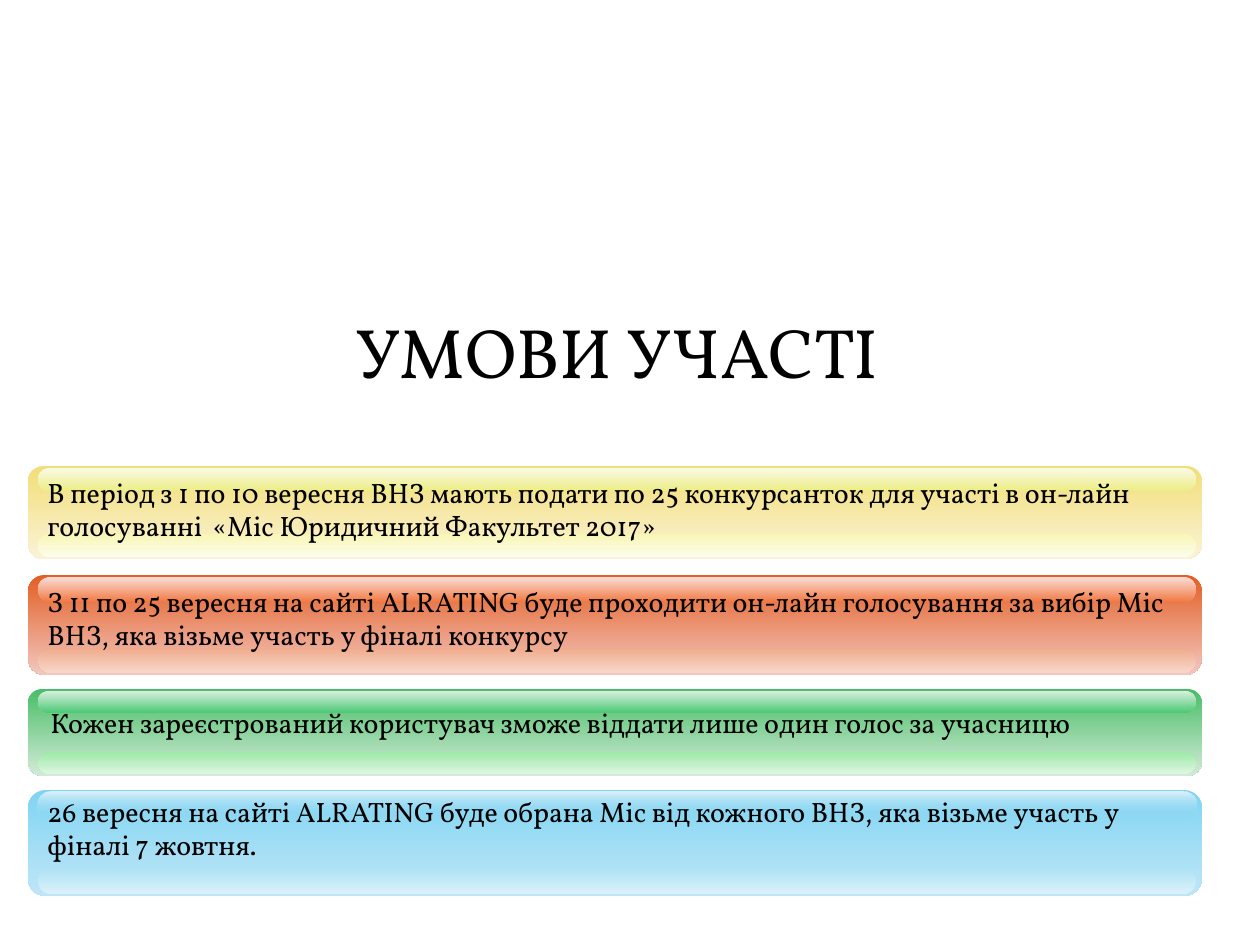
from pptx import Presentation
from pptx.dml.color import RGBColor
from pptx.enum.shapes import MSO_SHAPE as Shape
from pptx.enum.text import MSO_ANCHOR as Anchor, PP_ALIGN as Align
from pptx.oxml.ns import qn
from pptx.util import Pt
from lxml.etree import SubElement

PX = 914400 / 126
FONT = "Vollkorn"
TITLE = "УМОВИ УЧАСТІ"

# text, (bar top, height), (text left, top, height), palette name
CONDITIONS = [
    ("В період з 1 по 10 вересня ВНЗ мають подати по 25 конкурсанток для участі "
     "в он-лайн голосуванні  «Міс Юридичний Факультет 2017»",
     (466, 93), (35, 469, 81), "yellow"),
    ("З 11 по 25 вересня на сайті ALRATING буде проходити он-лайн голосування "
     "за вибір Міс ВНЗ, яка візьме участь у фіналі конкурсу",
     (575, 100), (35, 578, 81), "orange"),
    ("Кожен зареєстрований користувач зможе віддати лише один голос за учасницю",
     (689, 87), (38, 699, 47), "green"),
    ("26 вересня на сайті ALRATING буде обрана Міс від кожного ВНЗ, "
     "яка візьме участь у фіналі 7 жовтня.",
     (790, 106), (35, 788, 81), "blue"),
]
# gradients from top to bottom: bar, lower gloss, upper gloss
COLORS = {
    "text": "000000",
    "yellow": [("F2DE78", "FAF3D7"), ("F8F6B4", "FDFDED"), ("FAFAE6", "EDED85")],
    "orange": [("E35E23", "F2C7C0"), ("F0AB8C", "F7D7CB"), ("FADED8", "F17943")],
    "green": [("48BE67", "D4EAD8"), ("9FE9AA", "DDF6E0"), ("D9EFDE", "4DC976")],
    "blue": [("80D4F2", "BFE6F7"), ("ADE2F5", "DAF1FA"), ("DFF2FB", "80D4F2")],
}
BAR_X, BAR_W = 28, 1174
GLOSS_X, GLOSS_W, GLOSS_SHARE, GLOSS_GAP = 38, 1158, 0.25, 2


def px(*values):
    return [round(v * PX) for v in values]


def write(tf, text, size, align=Align.LEFT, anchor=Anchor.TOP, spacing=None):
    tf.word_wrap = True
    tf.vertical_anchor = anchor
    p = tf.paragraphs[0]
    p.alignment = align
    p.line_spacing = spacing
    r = p.add_run()
    r.text = text
    r.font.name, r.font.size = FONT, Pt(size)
    r.font.color.rgb = RGBColor.from_string(COLORS["text"])


def add_rounded(s, box, gradient, radius):
    sp = s.shapes.add_shape(Shape.ROUNDED_RECTANGLE, *px(*box))
    sp.adjustments[0] = radius
    sp.shadow.inherit = False
    sp.line.fill.background()
    sp.fill.gradient()
    sp.fill.gradient_angle = 270
    for stop, color in zip(sp.fill.gradient_stops, gradient):
        stop.color.rgb = RGBColor.from_string(color)
    return sp


def fade_out(sp):
    """Make the last gradient stop fully transparent."""
    last = list(sp.element.spPr.iter(qn("a:srgbClr")))[-1]
    SubElement(last, qn("a:alpha")).set("val", "0")


def add_condition(s, text, bar, text_box, palette):
    top, height = bar
    base, lower, upper = COLORS[palette]
    gloss_h = height * GLOSS_SHARE
    lower_top = top + height - GLOSS_GAP - gloss_h
    add_rounded(s, (BAR_X, top, BAR_W, height), base, 0.167)
    add_rounded(s, (GLOSS_X, lower_top, GLOSS_W, gloss_h), lower, 0.5)
    gloss = add_rounded(s, (GLOSS_X, top + GLOSS_GAP, GLOSS_W, gloss_h), upper, 0.5)
    if palette == "blue":
        fade_out(gloss)
    left, text_top, text_h = text_box
    tb = s.shapes.add_textbox(*px(left, text_top, BAR_X + BAR_W - left, text_h))
    write(tb.text_frame, text, 16)


def main():
    prs = Presentation()
    prs.slide_width, prs.slide_height = px(1260, 945)
    s = prs.slides.add_slide(prs.slide_layouts[5])
    for condition in CONDITIONS:
        add_condition(s, *condition)
    title = s.shapes.title
    title.left, title.top, title.width, title.height = px(110, 312, 1014, 145)
    write(title.text_frame, TITLE, 40, align=Align.CENTER, spacing=0.9)
    prs.save("out.pptx")


if __name__ == "__main__":
    main()
